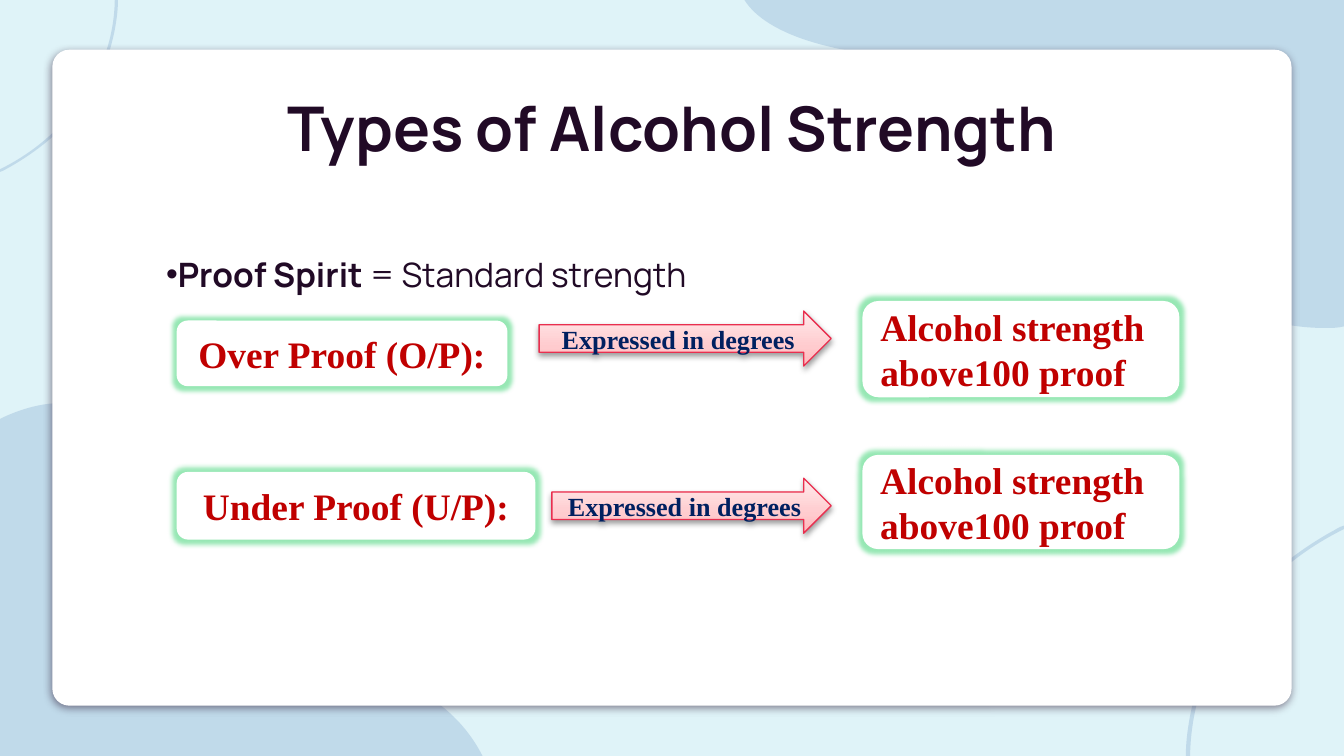
from lxml.etree import SubElement
from pptx import Presentation
from pptx.dml.color import RGBColor
from pptx.enum.shapes import MSO_SHAPE
from pptx.enum.text import MSO_ANCHOR, PP_ALIGN
from pptx.oxml.ns import qn
from pptx.util import Cm, Pt

COLORS = {
    "sky": "DFF3F8", "wave": "A0BFDB", "card": "FFFFFF", "ink": "210A26",
    "label": "C00000", "navy": "002060", "glow": "8CE6AD",
    "arrow_line": "E92F4F", "shade": "000000",
}
ARROW_STOPS = [(0, "FFB5BA"), (35, "FFCBCE"), (100, "FFEBEC")]
WIDTH, HEIGHT = 25.4, 14.29

TITLE = {"size": Pt(33), "name": "Manrope", "bold": True, "color": "ink"}
BODY_BOLD = {"size": Pt(18), "name": "Manrope", "bold": True, "color": "ink"}
BODY = {**BODY_BOLD, "bold": False}
LABEL = {"size": Pt(20), "name": "Times New Roman", "bold": True, "color": "label"}
ARROW = {"size": Pt(14), "name": "Times New Roman", "bold": True, "color": "navy"}

# Outlines in cm: each step lists its end point, after two control points if curved.
ARC = [
    [(2.17, 0)],
    [(2.16, 0.69), (1.93, 1.37), (1.52, 1.9)],
    [(1.14, 2.46), (0.61, 2.9), (0, 3.2)],
    [(0, 3.25)],
    [(0.08, 3.23), (0.13, 3.18), (0.2, 3.15)],
    [(0.69, 2.87), (1.14, 2.51), (1.5, 2.06)],
    [(1.85, 1.63), (2.08, 1.07), (2.18, 0.51)],
    [(2.21, 0.33), (2.23, 0.18), (2.23, 0)],
]
LOWER_WAVE = [
    [(1.14, 7.62)],
    [(0.56, 7.62), (0, 7.92), (0, 7.92)],
    [(0, HEIGHT)],
    [(9.12, HEIGHT)],
    [(7.95, 11.99), (4.34, 12.42), (2.84, 11.96)],
    [(1.35, 11.51), (3, 9.32), (2.18, 8.13)],
    [(1.9, 7.75), (1.52, 7.62), (1.14, 7.62)],
]
UPPER_WAVE = [
    [(14.07, 0)],
    [(14.48, 0.66), (15.85, 1.12), (18.08, 1.12)],
    [(18.16, 1.12), (18.24, 1.12), (18.34, 1.12)],
    [(18.36, 1.12), (18.39, 1.12), (18.42, 1.12)],
    [(21.77, 1.12), (20.35, 4.04), (22.83, 5.59)],
    [(23.5, 6.02), (24.38, 6.2), (25.02, 6.2)],
    [(25.17, 6.2), (25.29, 6.2), (WIDTH, 6.17)],
    [(WIDTH, 0)],
]


def rgb(name):
    return RGBColor.from_string(COLORS[name])


def add_color(parent, value, alpha=100):
    color = SubElement(parent, qn("a:srgbClr"), val=value)
    if alpha < 100:
        SubElement(color, qn("a:alpha"), val=str(alpha * 1000))


def add_effect(shape, kind, color, alpha, **lengths):
    shape.shadow.inherit = False
    effects = shape._element.spPr.find(qn("a:effectLst"))
    values = {key: str(int(value)) for key, value in lengths.items()}
    add_color(SubElement(effects, qn(f"a:{kind}"), **values), COLORS[color], alpha)


def add_shadow(shape, color, alpha, blur, distance):
    add_effect(shape, "outerShdw", color, alpha,
               blurRad=Pt(blur), dist=Pt(distance), dir=90 * 60000)


def bend(shape, steps):
    """Turn the straight segments of a freeform into Bezier curves where steps say so."""
    segments = list(shape._element.iter(qn("a:lnTo")))
    for segment, step in zip(segments, steps):
        if len(step) == 3:
            curve = segment.makeelement(qn("a:cubicBezTo"))
            for x, y in step:
                SubElement(curve, qn("a:pt"), x=str(x - shape.left), y=str(y - shape.top))
            segment.getparent().replace(segment, curve)


def add_wave(page, outline, origin=(0, 0), scale=1):
    steps = [[(Cm(origin[0] + scale * x), Cm(origin[1] + scale * y)) for x, y in step]
             for step in outline]
    builder = page.shapes.build_freeform(*steps[0][-1])
    builder.add_line_segments([step[-1] for step in steps[1:]], close=True)
    wave = builder.convert_to_shape()
    bend(wave, steps[1:])
    wave.shadow.inherit = False
    wave.line.fill.background()
    wave.fill.solid()
    wave.fill.fore_color.rgb = rgb("wave")
    color = wave._element.spPr.find(qn("a:solidFill"))[0]
    SubElement(color, qn("a:alpha"), val="48000")


def add_backdrop(page):
    page.background.fill.solid()
    page.background.fill.fore_color.rgb = rgb("sky")
    add_wave(page, ARC, origin=(WIDTH, HEIGHT), scale=-1.34)
    add_wave(page, LOWER_WAVE)
    add_wave(page, UPPER_WAVE)
    add_wave(page, ARC)
    card = add_panel(page, (0.99, 0.94, 23.42, 12.4))
    card.adjustments[0] = 0.026
    add_shadow(card, "ink", 50, 4.5, 1.5)


def add_panel(page, box):
    panel = page.shapes.add_shape(MSO_SHAPE.ROUNDED_RECTANGLE, *map(Cm, box))
    panel.fill.solid()
    panel.fill.fore_color.rgb = rgb("card")
    panel.line.fill.background()
    return panel


def write(shape, spans, align, anchor=MSO_ANCHOR.MIDDLE, spacing=1.0):
    frame = shape.text_frame
    frame.word_wrap = True
    frame.vertical_anchor = anchor
    para = frame.paragraphs[0]
    para.alignment = align
    para.line_spacing = spacing
    for text, style in spans:
        span = para.add_run()
        span.text = text
        for key, value in style.items():
            if key == "color":
                span.font.color.rgb = rgb(value)
            else:
                setattr(span.font, key, value)
    return para


def add_title(page, box):
    title = page.shapes.add_textbox(*map(Cm, box))
    for side in ("left", "top", "right", "bottom"):
        setattr(title.text_frame, f"margin_{side}", Cm(0.25))
    write(title, [("Types of Alcohol Strength", TITLE)], PP_ALIGN.CENTER,
          MSO_ANCHOR.TOP, 1.15)


def add_definition(page, box):
    body = page.shapes.add_textbox(*map(Cm, box))
    para = write(body, [("Proof Spirit", BODY_BOLD), (" = Standard strength", BODY)],
                 PP_ALIGN.LEFT, spacing=2.5)
    properties = para._p.get_or_add_pPr()
    SubElement(properties, qn("a:buFont"), typeface="Arial")
    SubElement(properties, qn("a:buChar"), char="•")


def add_glowing_label(page, box, text, align):
    label = add_panel(page, box)
    add_effect(label, "glow", "glow", 90, rad=Pt(5))
    write(label, [(text, LABEL)], align)


def add_arrow(page, box, text):
    arrow = page.shapes.add_shape(MSO_SHAPE.RIGHT_ARROW, *map(Cm, box))
    arrow.fill.gradient()
    arrow.fill.gradient_angle = 90
    stops = arrow._element.spPr.find(qn("a:gradFill")).find(qn("a:gsLst"))
    stops.clear()
    for position, color in ARROW_STOPS:
        add_color(SubElement(stops, qn("a:gs"), pos=str(position * 1000)), color)
    arrow.line.color.rgb = rgb("arrow_line")
    arrow.line.width = Pt(0.75)
    add_shadow(arrow, "shade", 38, 3.1, 1.6)
    write(arrow, [(text, ARROW)], PP_ALIGN.CENTER)


def add_strength_row(page, name, name_box, arrow_box, meaning_box):
    add_glowing_label(page, name_box, name, PP_ALIGN.CENTER)
    add_arrow(page, arrow_box, "Expressed in degrees")
    add_glowing_label(page, meaning_box, "Alcohol strength above100 proof", PP_ALIGN.LEFT)


def main():
    deck = Presentation()
    deck.slide_width, deck.slide_height = Cm(WIDTH), Cm(HEIGHT)
    page = deck.slides.add_slide(deck.slide_layouts[6])
    add_backdrop(page)
    add_title(page, (2, 1.24, 21.4, 1.6))
    add_definition(page, (2.89, 3.52, 18.14, 2.18))
    add_strength_row(page, "Over Proof (O/P):", (3.34, 6.06, 6.25, 1.24),
                     (10.19, 5.88, 5.52, 1.04), (16.3, 5.69, 5.99, 1.82))
    add_strength_row(page, "Under Proof (U/P):", (3.34, 8.92, 6.78, 1.28),
                     (10.43, 9.04, 5.28, 1.04), (16.3, 8.6, 5.99, 1.78))
    deck.save("out.pptx")


if __name__ == "__main__":
    main()
